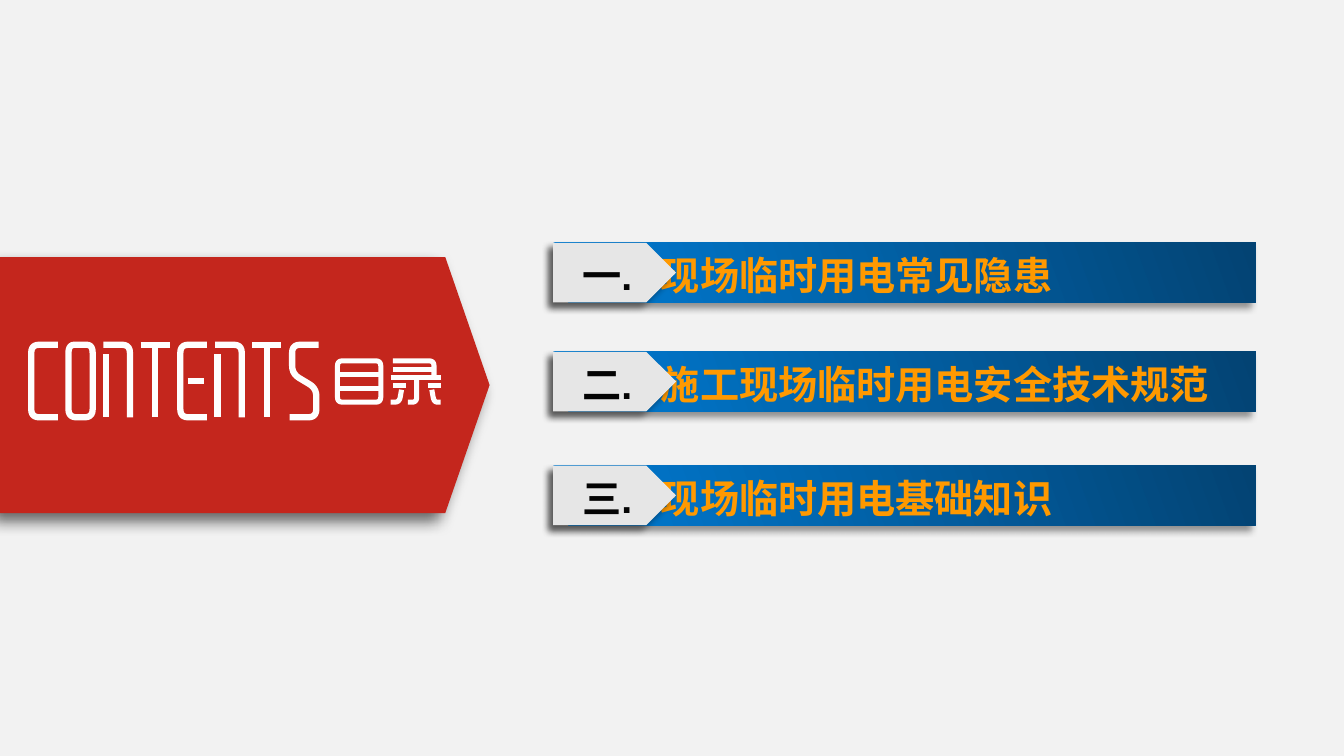
from dataclasses import dataclass
from lxml import etree
from pptx import Presentation
from pptx.dml.color import RGBColor as RGB
from pptx.enum.shapes import MSO_SHAPE as Kind
from pptx.enum.text import MSO_ANCHOR as Anchor, PP_ALIGN as Align
from pptx.oxml.ns import qn
from pptx.util import Inches, Pt


@dataclass(frozen=True)
class Theme:
    page: str = "F2F2F2"
    red: str = "C4261D"
    white: str = "FEFEFE"
    light: str = "007BD3"
    deep: str = "034373"
    plate: str = "E6E6E6"
    ink: str = "040404"
    gold: str = "FF9900"
    shade: str = "000000"
    face: str = "Arial"
    size: int = 28


# Pen strokes of each sign, in a cell that runs from 0 to 1 both ways.
HOOK = [(1.1, 0), (0, 0), (0, 1), (1.1, 1)]
RING = [(0.5, 0), (1, 0), (1, 1), (0, 1), (0, 0), (0.5, 0)]
SIGNS = {
    "C": [HOOK],
    "O": [RING],
    "N": [[(-0.1, 0), (1, 0), (1, 1)], [(0, 0.13), (0, 1)]],
    "T": [[(-0.1, 0), (1.1, 0)], [(0.5, 0), (0.5, 1)]],
    "E": [HOOK, [(0.3, 0.5), (1, 0.5)]],
    "S": [[(1.1, 0), (0, 0), (0, 0.4), (1, 0.6), (1, 1), (-0.1, 1)]],
    "目": [RING] + [[(0, y), (1, y)] for y in (0.33, 0.67)],
    "录": [[(0, 0), (0.95, 0), (0.95, 0.4)],
          [(0, 0.2), (0.95, 0.2)],
          [(-0.05, 0.4), (1.1, 0.4)],
          [(0, 0.6), (0.3, 0.6)],
          [(0.8, 0.6), (1.1, 0.6)],
          [(0.55, 0.4), (0.55, 1), (0.35, 1)],
          [(0.2, 0.7), (0.15, 1), (-0.05, 1)],
          [(0.9, 0.7), (0.95, 1), (1.1, 1)]],
}
# Cells in inches: first left, top, width, height, step; pen weight in points
WORDS = [("CONTENTS", dict(left=0.31, top=3.42, wide=0.24, high=0.72,
                           step=0.37, weight=4.5, bend=0.08)),
         ("目录", dict(left=3.35, top=3.58, wide=0.43, high=0.41,
                     step=0.55, weight=3.6, bend=0.05))]

ITEMS = [(2.41, "一.", "现场临时用电常见隐患"),
         (3.49, "二.", "施工现场临时用电安全技术规范"),
         (4.62, "三.", "现场临时用电基础知识")]


def toward(a, b, dist):
    """Return the point that lies dist from a on the way to b."""
    gap = ((b[0] - a[0]) ** 2 + (b[1] - a[1]) ** 2) ** 0.5
    part = min(dist / gap, 0.5)
    return tuple(p + (q - p) * part for p, q in zip(a, b))


def soften(pts, bend):
    """Replace each inner corner with a short quadratic curve."""
    out = [pts[0]]
    for prev, turn, after in zip(pts, pts[1:], pts[2:]):
        a, c = toward(turn, prev, bend), toward(turn, after, bend)
        for t in (n / 5 for n in range(6)):
            out.append(tuple((1 - t) ** 2 * i + 2 * t * (1 - t) * j + t * t * k
                             for i, j, k in zip(a, turn, c)))
    return out + [pts[-1]]


class Page:
    def __init__(self, deck, theme):
        self.theme = theme
        self.slide = deck.slides.add_slide(deck.slide_layouts[6])
        self.paint(self.slide.background.fill, theme.page)

    def paint(self, fill, color):
        fill.solid()
        fill.fore_color.rgb = RGB.from_string(color)

    def shade(self, shape, alpha, blur, dist):
        """Drop a shadow to the lower left; blur and distance in points."""
        effects = shape.element.spPr.find(qn("a:effectLst"))
        drop = etree.SubElement(effects, qn("a:outerShdw"), blurRad=str(Pt(blur)),
                                dist=str(Pt(dist)), dir="8100000", rotWithShape="0")
        tone = etree.SubElement(drop, qn("a:srgbClr"), val=self.theme.shade)
        etree.SubElement(tone, qn("a:alpha"), val=str(alpha * 1000))

    def trace(self, runs, close):
        """Build one freeform from runs of points given in inches."""
        runs = [[(Inches(x), Inches(y)) for x, y in run] for run in runs]
        pen = self.slide.shapes.build_freeform(*runs[0][0])
        for run in runs:
            pen.move_to(*run[0])
            pen.add_line_segments(run[1:], close=close)
        shape = pen.convert_to_shape()
        shape.shadow.inherit = False
        return shape

    def banner(self, top, wide, high, tip):
        """Draw the red arrow that enters from the left edge."""
        base, neck = top + high, wide - tip
        shape = self.trace([[(0, top), (neck, top), (wide, top + high / 2),
                             (neck, base), (0, base)]], True)
        self.paint(shape.fill, self.theme.red)
        shape.line.fill.background()
        self.shade(shape, 59, 11, 8)

    def word(self, text, left, top, wide, high, step, weight, bend):
        """Write drawn lettering, one cell per sign."""
        runs = []
        for i, sign in enumerate(text):
            for stroke in SIGNS[sign]:
                pts = [(left + i * step + x * wide, top + y * high)
                       for x, y in stroke]
                runs.append(soften(pts, bend))
        shape = self.trace(runs, False)
        shape.fill.background()
        self.paint(shape.line.fill, self.theme.white)
        shape.line.width = Pt(weight)

    def label(self, shape, text, color, align, **frame):
        base = dict(word_wrap=True, vertical_anchor=Anchor.MIDDLE,
                    margin_top=0, margin_bottom=0)
        para = shape.text_frame.paragraphs[0]
        run = para.add_run()
        run.text = text
        style = dict(name=self.theme.face, size=Pt(self.theme.size), bold=True)
        for part, values in ((shape.text_frame, base | frame), (run.font, style),
                             (para, dict(alignment=align, line_spacing=1.1))):
            for key, value in values.items():
                setattr(part, key, value)
        run.font.color.rgb = RGB.from_string(color)
        etree.SubElement(run.font._element, qn("a:ea"), typeface=self.theme.face)

    def block(self, group, kind, top, width):
        shape = group.shapes.add_shape(kind, Inches(5.49), Inches(top),
                                       Inches(width), Inches(0.59))
        shape.shadow.inherit = False
        shape.line.fill.background()
        self.shade(shape, 40, 5, 5)
        return shape

    def item(self, top, mark, text):
        look = self.theme
        group = self.slide.shapes.add_group_shape()
        bar = self.block(group, Kind.RECTANGLE, top, 6.97)
        bar.fill.gradient()
        bar.fill.gradient_angle = 20
        for stop, color in zip(bar.fill.gradient_stops, (look.light, look.deep)):
            stop.color.rgb = RGB.from_string(color)
        self.label(bar, text, look.gold, Align.LEFT, margin_left=Inches(1.07))
        plate = self.block(group, Kind.PENTAGON, top, 1.22)
        self.paint(plate.fill, look.plate)
        self.label(plate, mark, look.ink, Align.CENTER)


def main():
    deck = Presentation()
    deck.slide_width, deck.slide_height = Inches(13.34), Inches(7.5)
    page = Page(deck, Theme())
    page.banner(top=2.55, wide=4.86, high=2.54, tip=0.44)
    for text, cell in WORDS:
        page.word(text, **cell)
    for entry in ITEMS:
        page.item(*entry)
    deck.save("out.pptx")


if __name__ == "__main__":
    main()
